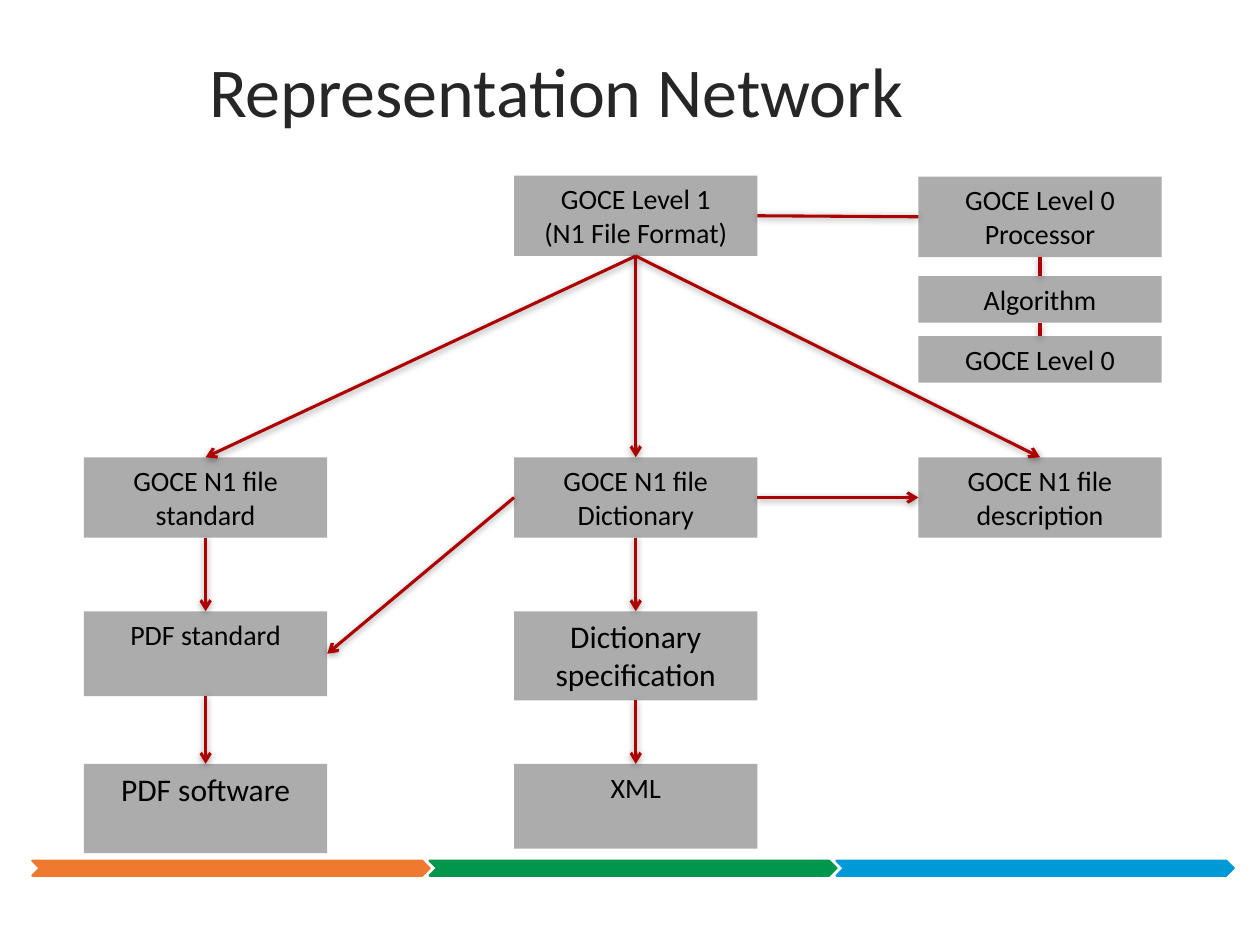
from dataclasses import dataclass

from lxml import etree
from pptx import Presentation
from pptx.dml.color import RGBColor
from pptx.enum.shapes import MSO_CONNECTOR, MSO_SHAPE
from pptx.enum.text import MSO_ANCHOR, MSO_AUTO_SIZE, PP_ALIGN
from pptx.oxml import parse_xml
from pptx.oxml.ns import nsdecls, qn
from pptx.shapes.autoshape import Shape
from pptx.slide import Slide
from pptx.text.text import TextFrame
from pptx.util import Pt

RECTANGLE, CHEVRON = MSO_SHAPE.RECTANGLE, MSO_SHAPE.CHEVRON
STRAIGHT = MSO_CONNECTOR.STRAIGHT
TOP, LEFT, BOTTOM, RIGHT = range(4)

GREY = RGBColor(0xAC, 0xAC, 0xAC)
BLACK = RGBColor(0x00, 0x00, 0x00)
CHARCOAL = RGBColor(0x26, 0x26, 0x26)
RED = RGBColor(0xAD, 0x01, 0x01)
ORANGE = RGBColor(0xEF, 0x79, 0x2F)
GREEN = RGBColor(0x00, 0x96, 0x4B)
BLUE = RGBColor(0x00, 0x99, 0xD8)

FONT = "Calibri"
NODE_WIDTH = 139
COLUMN_1, COLUMN_2, COLUMN_3 = 48, 293.8, 524.8
ROW_1, ROW_2, ROW_3, ROW_4 = 100.3, 261.3, 349.3, 436.5
ONE_LINE, TWO_LINES, MEDIUM, TALL = 26.6, 46, 48.5, 51


@dataclass(frozen=True)
class Node:
    name: str
    text: str
    left: float
    top: float
    height: float = TWO_LINES
    size: int = 16


@dataclass(frozen=True)
class Link:
    start: str
    start_side: int
    end: str
    end_side: int
    arrow: bool = True


@dataclass(frozen=True)
class Band:
    left: float
    width: float
    color: RGBColor


BANDS = (
    Band(245.5, 232.5, GREEN),
    Band(18.5, 227, ORANGE),
    Band(478, 227, BLUE),
)
NODES = (
    Node("level 1", "GOCE Level 1\n(N1 File Format)", COLUMN_2, ROW_1),
    Node("processor", "GOCE Level 0\nProcessor", COLUMN_3, ROW_1 + 0.6),
    Node("algorithm", "Algorithm", COLUMN_3, 157.8, ONE_LINE),
    Node("level 0", "GOCE Level 0", COLUMN_3, 192.1, ONE_LINE),
    Node("file standard", "GOCE N1 file\nstandard", COLUMN_1, ROW_2),
    Node("dictionary", "GOCE N1 file\nDictionary", COLUMN_2, ROW_2),
    Node("description", "GOCE N1 file\ndescription", COLUMN_3, ROW_2),
    Node("PDF standard", "PDF standard", COLUMN_1, ROW_3, MEDIUM),
    Node("specification", "Dictionary specification", COLUMN_2, ROW_3, TALL, 18),
    Node("PDF software", "PDF software", COLUMN_1, ROW_4, TALL, 18),
    Node("XML", "XML", COLUMN_2, ROW_4, MEDIUM),
)
LINKS = (
    Link("level 0", TOP, "algorithm", BOTTOM, arrow=False),
    Link("algorithm", TOP, "processor", BOTTOM, arrow=False),
    Link("processor", LEFT, "level 1", RIGHT, arrow=False),
    Link("level 1", BOTTOM, "file standard", TOP),
    Link("level 1", BOTTOM, "dictionary", TOP),
    Link("level 1", BOTTOM, "description", TOP),
    Link("file standard", BOTTOM, "PDF standard", TOP),
    Link("PDF standard", BOTTOM, "PDF software", TOP),
    Link("dictionary", BOTTOM, "specification", TOP),
    Link("specification", BOTTOM, "XML", TOP),
    Link("dictionary", LEFT, "PDF standard", RIGHT),
    Link("dictionary", RIGHT, "description", LEFT),
)


def format_text(frame: TextFrame, size: int, color: RGBColor, alignment: PP_ALIGN) -> None:
    frame.word_wrap = True
    frame.auto_size = MSO_AUTO_SIZE.NONE
    for para in frame.paragraphs:
        para.alignment = alignment
        for span in para.runs:
            span.font.name = FONT
            span.font.size = Pt(size)
            span.font.color.rgb = color


def add_title(page: Slide) -> None:
    title = page.shapes.title
    title.left, title.top, title.width, title.height = Pt(112.3), Pt(16), Pt(492.5), Pt(63)
    title.text_frame.text = "Representation Network"
    title.text_frame.vertical_anchor = MSO_ANCHOR.BOTTOM
    format_text(title.text_frame, 40, CHARCOAL, PP_ALIGN.LEFT)


def add_band(page: Slide, band: Band) -> None:
    shape = page.shapes.add_shape(CHEVRON, Pt(band.left), Pt(491.8), Pt(band.width), Pt(8.6))
    shape.shadow.inherit = False
    shape.fill.solid()
    shape.fill.fore_color.rgb = band.color
    shape.line.color.rgb = band.color
    shape.line.width = Pt(1.25)


def add_node(page: Slide, node: Node) -> Shape:
    box = page.shapes.add_shape(
        RECTANGLE, Pt(node.left), Pt(node.top), Pt(NODE_WIDTH), Pt(node.height)
    )
    box.shadow.inherit = False
    box.fill.solid()
    box.fill.fore_color.rgb = GREY
    box.line.fill.background()
    box.text_frame.text = node.text
    box.text_frame.vertical_anchor = MSO_ANCHOR.TOP
    format_text(box.text_frame, node.size, BLACK, PP_ALIGN.CENTER)
    return box


def add_link(page: Slide, link: Link, boxes: dict[str, Shape]) -> None:
    connector = page.shapes.add_connector(STRAIGHT, Pt(0), Pt(0), Pt(0), Pt(0))
    connector.begin_connect(boxes[link.start], link.start_side)
    connector.end_connect(boxes[link.end], link.end_side)
    connector.line.color.rgb = RED
    connector.line.width = Pt(1.75)
    if link.arrow:
        line = connector.line._get_or_add_ln()
        etree.SubElement(line, qn("a:tailEnd"), type="arrow")
    connector._element.spPr.append(parse_xml(
        f'<a:effectLst {nsdecls("a")}>'
        f'<a:outerShdw blurRad="{Pt(4)}" dist="{Pt(1)}" dir="5280000" rotWithShape="0">'
        '<a:srgbClr val="000000"><a:alpha val="40000"/></a:srgbClr>'
        '</a:outerShdw></a:effectLst>'
    ))


def main() -> None:
    deck = Presentation()
    deck.slide_width, deck.slide_height = Pt(720), Pt(540)
    page = deck.slides.add_slide(deck.slide_layouts[5])
    add_title(page)
    for band in BANDS:
        add_band(page, band)
    boxes = {node.name: add_node(page, node) for node in NODES}
    for link in LINKS:
        add_link(page, link, boxes)
    deck.save("out.pptx")


if __name__ == "__main__":
    main()
